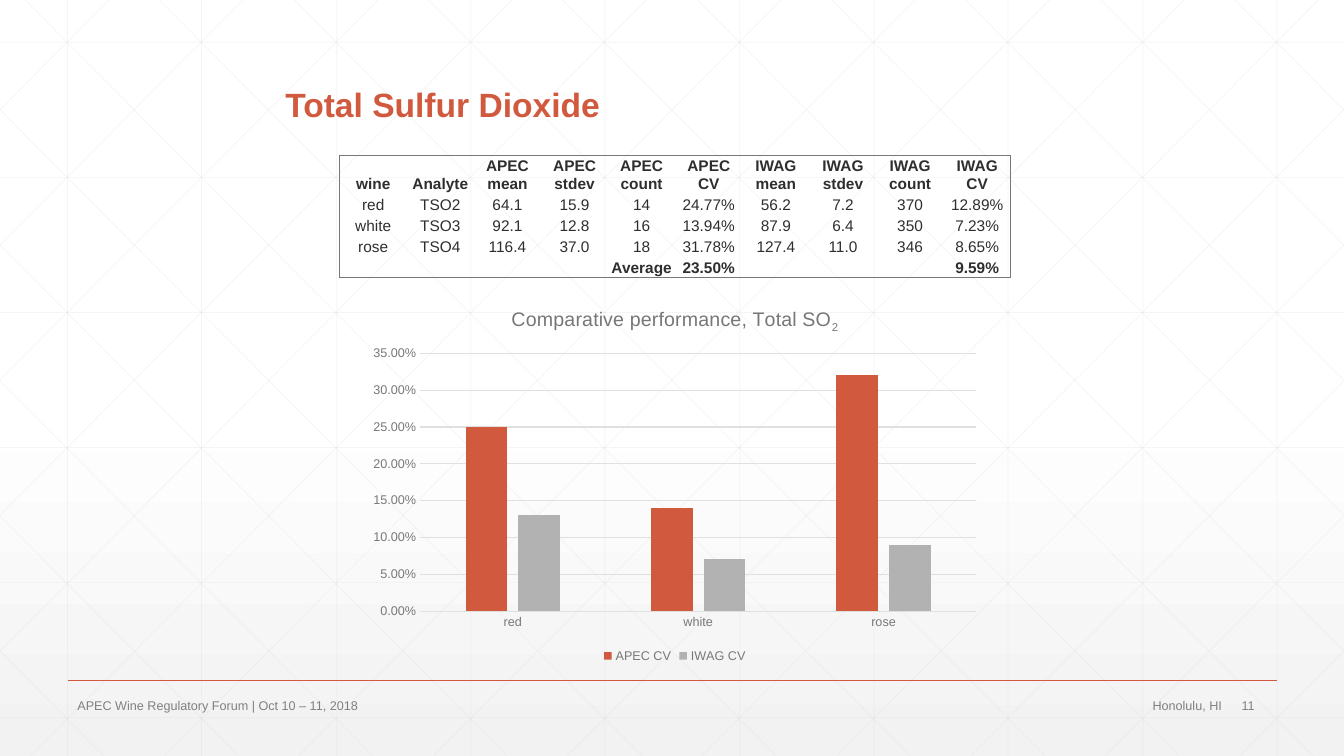
"""Builds the Total Sulfur Dioxide slide with its comparison table and chart."""
from dataclasses import dataclass

from lxml import etree
from pptx import Presentation
from pptx.chart.data import CategoryChartData
from pptx.dml.color import RGBColor
from pptx.enum.chart import XL_CHART_TYPE, XL_LEGEND_POSITION, XL_TICK_MARK
from pptx.enum.shapes import MSO_CONNECTOR
from pptx.enum.text import MSO_ANCHOR, PP_ALIGN
from pptx.oxml.ns import qn
from pptx.util import Emu, Pt

COLUMNS = XL_CHART_TYPE.COLUMN_CLUSTERED
LEGEND_BOTTOM = XL_LEGEND_POSITION.BOTTOM
NO_TICK = XL_TICK_MARK.NONE
STRAIGHT = MSO_CONNECTOR.STRAIGHT
BOTTOM, MIDDLE = MSO_ANCHOR.BOTTOM, MSO_ANCHOR.MIDDLE
LEFT, CENTER, RIGHT = PP_ALIGN.LEFT, PP_ALIGN.CENTER, PP_ALIGN.RIGHT

WHITE = RGBColor(0xFF, 0xFF, 0xFF)
PALE = RGBColor(0xF2, 0xF2, 0xF2)
LATTICE = RGBColor(0xD9, 0xD9, 0xD9)
ACCENT = RGBColor(0xD1, 0x5A, 0x3E)
SILVER = RGBColor(0xB2, 0xB2, 0xB2)
INK = RGBColor(0x2D, 0x2E, 0x2D)
MUTED = RGBColor(0x76, 0x78, 0x76)
CHART_RULE = RGBColor(0xDF, 0xE0, 0xDF)
FOOTER_TEXT = RGBColor(0x80, 0x80, 0x80)

FONT = "Arial"
EMU_PER_PX = 9144
WIDTH, HEIGHT = 1333, 750
PITCH = 400 / 3
DIAGONAL_START, DIAGONAL_RUN = 25, 745
HEADER_ROW, BODY_ROW = 35, 21


@dataclass(frozen=True)
class Rule:
    x1: int
    y1: int
    x2: int
    y2: int
    color: RGBColor = LATTICE
    weight: float = 0.5
    opacity: int = 25


@dataclass(frozen=True)
class FooterPart:
    words: str
    left: int
    width: int
    align: PP_ALIGN = LEFT


FOOTER = (
    FooterPart("11", 1222, 45),
    FooterPart("APEC Wine Regulatory Forum | Oct 10 – 11, 2018", 67, 670),
    FooterPart("Honolulu, HI", 744, 478, RIGHT),
)
RESULTS = (
    ("wine", "Analyte", "APEC mean", "APEC stdev", "APEC count", "APEC CV",
     "IWAG mean", "IWAG stdev", "IWAG count", "IWAG CV"),
    ("red", "TSO2", "64.1", "15.9", "14", "24.77%", "56.2", "7.2", "370", "12.89%"),
    ("white", "TSO3", "92.1", "12.8", "16", "13.94%", "87.9", "6.4", "350", "7.23%"),
    ("rose", "TSO4", "116.4", "37.0", "18", "31.78%", "127.4", "11.0", "346", "8.65%"),
    ("", "", "", "", "Average", "23.50%", "", "", "", "9.59%"),
)
VARIATION = (
    ("APEC CV", (0.25, 0.14, 0.32), ACCENT),
    ("IWAG CV", (0.13, 0.07, 0.09), SILVER),
)


def px(length: int) -> Emu:
    return Emu(length * EMU_PER_PX)


def box(*lengths: int) -> list[Emu]:
    return [px(length) for length in lengths]


def style_font(font, size: float, color: RGBColor, bold: bool = False) -> None:
    font.name, font.size, font.bold = FONT, Pt(size), bold
    font.color.rgb = color


def add_run(paragraph, words: str, size: float, color: RGBColor, bold: bool = False) -> None:
    run = paragraph.add_run()
    run.text = words
    style_font(run.font, size, color, bold)


def lattice_rules() -> list[Rule]:
    rules = [Rule(x, 0, x, HEIGHT) for x in (round(67 + PITCH * i) for i in range(10))]
    rules += [Rule(0, y, WIDTH, y) for y in range(42, HEIGHT, 134)]
    slope = HEIGHT / DIAGONAL_RUN
    for i in range(-5, 10):
        top = DIAGONAL_START + PITCH * i
        x1, x2 = max(0, round(top)), min(WIDTH, round(top + DIAGONAL_RUN))
        y1 = max(0, round(-top * slope))
        y2 = min(HEIGHT, round((WIDTH - top) * slope))
        rules.append(Rule(x1, y1, x2, y2))
        rules.append(Rule(WIDTH - x1, y1, WIDTH - x2, y2))
    return rules


def draw_rule(slide, rule: Rule) -> None:
    connector = slide.shapes.add_connector(STRAIGHT, *box(rule.x1, rule.y1, rule.x2, rule.y2))
    connector.line.color.rgb = rule.color
    connector.line.width = Pt(rule.weight)
    properties = connector.element.find(qn("p:spPr"))
    if rule.opacity < 100:
        tint = next(properties.iter(qn("a:srgbClr")))
        etree.SubElement(tint, qn("a:alpha"), val=str(rule.opacity * 1000))
    etree.SubElement(properties, qn("a:effectLst"))


def draw_background(slide) -> None:
    fill = slide.background.fill
    fill.gradient()
    fill.gradient_angle = 270
    for stop, color, position in zip(fill.gradient_stops, (WHITE, PALE), (0.53, 1.0)):
        stop.color.rgb = color
        stop.position = position
    for rule in lattice_rules():
        draw_rule(slide, rule)
    draw_rule(slide, Rule(67, 675, 1267, 675, ACCENT, 1, 100))


def draw_title(slide) -> None:
    title = slide.shapes.title
    title.element.getparent().append(title.element)
    title.left, title.top, title.width, title.height = box(273, 55, 788, 74)
    title.text_frame.vertical_anchor = BOTTOM
    heading = title.text_frame.paragraphs[0]
    heading.alignment, heading.line_spacing = LEFT, 0.9
    add_run(heading, "Total Sulfur Dioxide", 24, ACCENT, True)


def draw_footer(slide, part: FooterPart) -> None:
    frame = slide.shapes.add_textbox(*box(part.left, 688, part.width, 24)).text_frame
    frame.word_wrap = True
    frame.vertical_anchor = MIDDLE
    frame.paragraphs[0].alignment = part.align
    add_run(frame.paragraphs[0], part.words, 9, FOOTER_TEXT)


def add_border(properties, side: str, visible: bool) -> None:
    border = etree.SubElement(properties, qn(f"a:ln{side}"), w=str(Pt(0.5)))
    if visible:
        fill = etree.SubElement(border, qn("a:solidFill"))
        etree.SubElement(fill, qn("a:srgbClr"), val=str(MUTED))
    else:
        etree.SubElement(border, qn("a:noFill"))


def draw_results(slide) -> None:
    last_row, last_column = len(RESULTS) - 1, len(RESULTS[0]) - 1
    height = HEADER_ROW + BODY_ROW * last_row
    frame = slide.shapes.add_table(last_row + 1, last_column + 1, *box(337, 154, 666, height))
    table = frame.table
    table.first_row = table.horz_banding = False
    for i, row in enumerate(table.rows):
        row.height = px(BODY_ROW if i else HEADER_ROW)
    for index, element in enumerate(frame.element.iter(qn("a:tc"))):
        i, j = divmod(index, last_column + 1)
        cell, words = table.cell(i, j), RESULTS[i][j]
        cell.vertical_anchor = BOTTOM
        cell.margin_left = cell.margin_right = px(1)
        cell.margin_top = cell.margin_bottom = 0
        edges = {"L": j == 0, "R": j == last_column, "T": i == 0, "B": i == last_row}
        for side, visible in edges.items():
            add_border(element.find(qn("a:tcPr")), side, visible)
        cell.fill.background()
        paragraph = cell.text_frame.paragraphs[0]
        paragraph.alignment = CENTER
        if words:
            add_run(paragraph, words, 11, INK, i in (0, last_row))
        else:
            etree.SubElement(next(element.iter(qn("a:p"))), qn("a:endParaRPr"), sz="1100")


def draw_chart(slide) -> None:
    data = CategoryChartData(number_format="0.00%")
    data.categories = [row[0] for row in RESULTS[1:-1]]
    for name, values, _ in VARIATION:
        data.add_series(name, values)
    chart = slide.shapes.add_chart(COLUMNS, *box(358, 288, 623, 374), data).chart
    style_font(chart.font, 10, INK)
    heading = chart.chart_title.text_frame.paragraphs[0]
    add_run(heading, "Comparative performance, Total SO", 14, MUTED)
    add_run(heading, "2", 14, MUTED)
    list(chart.chart_title.element.iter(qn("a:rPr")))[-1].set("baseline", "-25000")
    chart.has_legend = True
    chart.legend.position = LEGEND_BOTTOM
    chart.legend.include_in_layout = False
    style_font(chart.legend.font, 9, MUTED)
    for axis in (chart.category_axis, chart.value_axis):
        axis.major_tick_mark = axis.minor_tick_mark = NO_TICK
        style_font(axis.tick_labels.font, 9, MUTED)
    scale = chart.value_axis
    scale.minimum_scale, scale.maximum_scale, scale.major_unit = 0, 0.35, 0.05
    scale.tick_labels.number_format = "0.00%"
    scale.tick_labels.number_format_is_linked = False
    scale.format.line.fill.background()
    for line in (chart.category_axis.format.line, scale.major_gridlines.format.line):
        line.color.rgb = CHART_RULE
        line.width = Pt(0.75)
    plot = chart.plots[0]
    plot.gap_width, plot.overlap, plot.vary_by_categories = 219, -27, False
    for series, (_, _, color) in zip(plot.series, VARIATION):
        series.format.fill.solid()
        series.format.fill.fore_color.rgb = color


def main() -> None:
    deck = Presentation()
    deck.slide_width, deck.slide_height = px(HEIGHT) * 16 // 9, px(HEIGHT)
    slide = deck.slides.add_slide(deck.slide_layouts[5])
    draw_background(slide)
    draw_title(slide)
    for part in FOOTER:
        draw_footer(slide, part)
    draw_results(slide)
    draw_chart(slide)
    deck.save("out.pptx")


if __name__ == "__main__":
    main()
